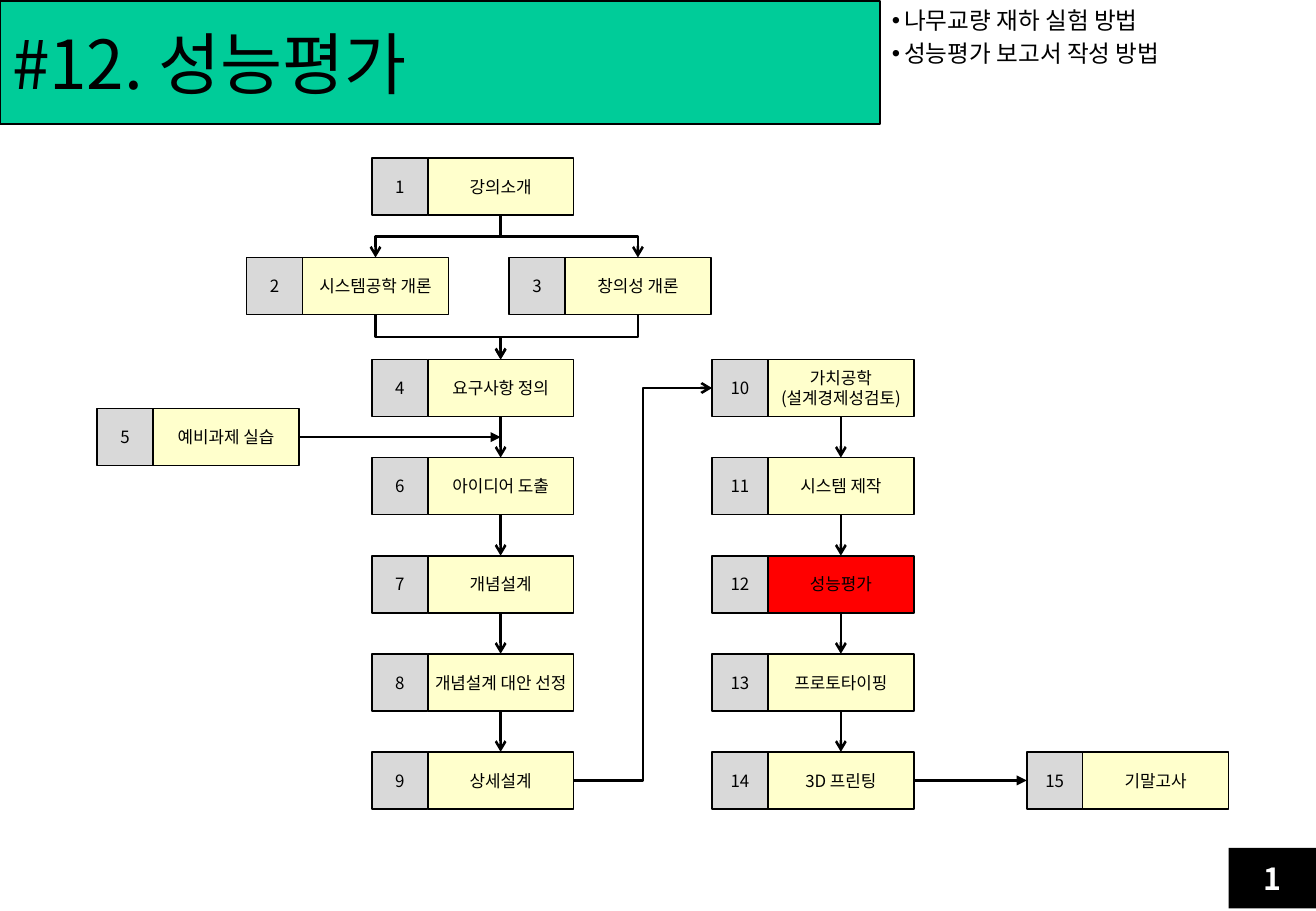
from typing import NamedTuple

from lxml import etree
from pptx import Presentation
from pptx.dml.color import RGBColor
from pptx.enum.shapes import MSO_CONNECTOR, MSO_SHAPE
from pptx.enum.text import MSO_ANCHOR, MSO_AUTO_SIZE, PP_ALIGN
from pptx.oxml.ns import qn
from pptx.util import Inches, Pt

STRAIGHT, ELBOW = MSO_CONNECTOR.STRAIGHT, MSO_CONNECTOR.ELBOW
RECTANGLE, PROCESS = MSO_SHAPE.RECTANGLE, MSO_SHAPE.FLOWCHART_PROCESS
TOP, MIDDLE = MSO_ANCHOR.TOP, MSO_ANCHOR.MIDDLE
LEFT, CENTER = PP_ALIGN.LEFT, PP_ALIGN.CENTER

FONT = "Noto Sans CJK KR"
BLACK, WHITE, GREEN = "000000", "FFFFFF", "00CC99"
GRAY, CREAM, RED = "D9D9D9", "FFFFCC", "FF0000"

NUMBER_W, LABEL_W, STEP_H = 0.46, 1.2, 0.47
MAIN_X, SECOND_X = 3.06, 5.86
INTRO_Y, BASICS_Y, FLOW_Y, LAST_Y = 1.3, 2.12, 2.96, 6.19
ROW_PITCH = (LAST_Y - FLOW_Y) / 4
CURRENT_STEP = 12


class Point(NamedTuple):
    x: float
    y: float


class Step(NamedTuple):
    number: int
    lines: tuple[str, ...]
    left: float
    top: float

    @property
    def label_left(self) -> float:
        return self.left + NUMBER_W

    @property
    def entry(self) -> Point:
        return Point(self.label_left + LABEL_W / 2, self.top)

    @property
    def exit(self) -> Point:
        return Point(self.entry.x, self.top + STEP_H)

    @property
    def left_side(self) -> Point:
        return Point(self.left, self.top + STEP_H / 2)

    @property
    def right_side(self) -> Point:
        return Point(self.label_left + LABEL_W, self.top + STEP_H / 2)


def flow_row(row: float) -> float:
    return FLOW_Y + row * ROW_PITCH


STEPS = {step.number: step for step in (
    Step(1, ("강의소개",), MAIN_X, INTRO_Y),
    Step(2, ("시스템공학 개론",), 2.03, BASICS_Y),
    Step(3, ("창의성 개론",), 4.19, BASICS_Y),
    Step(4, ("요구사항 정의",), MAIN_X, flow_row(0)),
    Step(5, ("예비과제 실습",), 0.8, flow_row(0.5)),
    Step(6, ("아이디어 도출",), MAIN_X, flow_row(1)),
    Step(7, ("개념설계",), MAIN_X, flow_row(2)),
    Step(8, ("개념설계 대안 선정",), MAIN_X, flow_row(3)),
    Step(9, ("상세설계",), MAIN_X, flow_row(4)),
    Step(10, ("가치공학", "(설계경제성검토)"), SECOND_X, flow_row(0)),
    Step(11, ("시스템 제작",), SECOND_X, flow_row(1)),
    Step(12, ("성능평가",), SECOND_X, flow_row(2)),
    Step(13, ("프로토타이핑",), SECOND_X, flow_row(3)),
    Step(14, ("3D 프린팅",), SECOND_X, flow_row(4)),
    Step(15, ("기말고사",), 8.45, flow_row(4)),
)}
DOWNWARD = ((4, 6), (6, 7), (7, 8), (8, 9), (10, 11), (11, 12), (12, 13), (13, 14))
BRANCHES = ((1, 2), (1, 3), (2, 4), (3, 4))


def color(value: str) -> RGBColor:
    return RGBColor.from_string(value)


def place(shape, left: float, top: float, width: float, height: float) -> None:
    shape.left, shape.top = Inches(left), Inches(top)
    shape.width, shape.height = Inches(width), Inches(height)


def paint(shape, fill: str, outlined: bool = True) -> None:
    shape.fill.solid()
    shape.fill.fore_color.rgb = color(fill)
    if outlined:
        shape.line.color.rgb = color(BLACK)
        shape.line.width = Pt(1)
    else:
        shape.line.fill.background()


def write(shape, lines: tuple[str, ...], size: float, align=CENTER, anchor=MIDDLE,
          ink: str = BLACK, bold: bool = False, wrap: bool = True) -> None:
    frame = shape.text_frame
    frame.auto_size = MSO_AUTO_SIZE.NONE
    frame.word_wrap = wrap
    frame.vertical_anchor = anchor
    for index, line in enumerate(lines):
        paragraph = frame.add_paragraph() if index else frame.paragraphs[0]
        paragraph.alignment = align
        run = paragraph.add_run()
        run.text = line
        run.font.size, run.font.bold = Pt(size), bold
        run.font.color.rgb = color(ink)
        run.font.name = FONT
        etree.SubElement(run.font._element, qn("a:ea"), typeface=FONT)


def add_box(slide, preset, left: float, top: float, width: float, height: float,
            fill: str, outlined: bool = True):
    box = slide.shapes.add_shape(preset, Inches(left), Inches(top),
                                 Inches(width), Inches(height))
    box.shadow.inherit = False
    paint(box, fill, outlined)
    return box


def add_step(slide, step: Step) -> None:
    label_fill = RED if step.number == CURRENT_STEP else CREAM
    cells = (
        (step.label_left, LABEL_W, label_fill, step.lines, 0.04),
        (step.left, NUMBER_W, GRAY, (str(step.number),), 0),
    )
    for left, width, fill, lines, side_inset in cells:
        cell = add_box(slide, PROCESS, left, step.top, width, STEP_H, fill)
        frame = cell.text_frame
        frame.margin_left = frame.margin_right = Inches(side_inset)
        frame.margin_top = frame.margin_bottom = Inches(0.04)
        write(cell, lines, 10)


def add_arrow(slide, start: Point, end: Point, kind=STRAIGHT, head: str = "arrow"):
    arrow = slide.shapes.add_connector(kind, Inches(start.x), Inches(start.y),
                                       Inches(end.x), Inches(end.y))
    arrow.line.color.rgb = color(BLACK)
    arrow.line.width = Pt(1.5)
    etree.SubElement(arrow.line._get_or_add_ln(), qn("a:tailEnd"), type=head)
    etree.SubElement(arrow._element.spPr, qn("a:effectLst"))
    return arrow


def add_branch(slide, start: Point, end: Point) -> None:
    """Draw an elbow that leaves downward: a sideways elbow turned by a quarter."""
    side = 1 if end.x < start.x else -1
    middle = Point((start.x + end.x) / 2, (start.y + end.y) / 2)
    half_drop, half_span = (end.y - start.y) / 2, abs(end.x - start.x) / 2
    branch = add_arrow(slide,
                       Point(middle.x - side * half_drop, middle.y - half_span),
                       Point(middle.x + side * half_drop, middle.y + half_span), ELBOW)
    quarter_turn = 90 if side == 1 else 270
    branch._element.spPr.find(qn("a:xfrm")).set("rot", str(quarter_turn * 60000))


def add_heading(slide) -> None:
    title, topics = slide.shapes.title, slide.placeholders[1]
    place(title, 0, 0.01, 7.24, 1.01)
    paint(title, GREEN)
    write(title, ("#12. 성능평가",), 40, align=LEFT, wrap=False)

    place(topics, 7.24, 0, 3.59, 1.46)
    write(topics, ("나무교량 재하 실험 방법", "성능평가 보고서 작성 방법"), 14,
          align=LEFT, anchor=TOP)
    for topic in topics.text_frame.paragraphs:
        properties = topic._p.get_or_add_pPr()
        properties.set("marL", str(Inches(0.1)))
        properties.set("indent", str(Inches(-0.1)))
        etree.SubElement(properties, qn("a:buChar"), char="•")


def main() -> None:
    deck = Presentation()
    deck.slide_width, deck.slide_height = Inches(10.83), Inches(7.5)
    slide = deck.slides.add_slide(deck.slide_layouts[1])

    add_heading(slide)
    page_number = add_box(slide, RECTANGLE, 10.11, 6.98, 0.72, 0.5, BLACK, outlined=False)
    write(page_number, ("1",), 18, ink=WHITE, bold=True)

    for step in STEPS.values():
        add_step(slide, step)
    for source, target in DOWNWARD:
        add_arrow(slide, STEPS[source].exit, STEPS[target].entry)
    for source, target in BRANCHES:
        add_branch(slide, STEPS[source].exit, STEPS[target].entry)

    practice = STEPS[5].right_side
    add_arrow(slide, practice, Point(STEPS[4].exit.x, practice.y), head="triangle")
    add_arrow(slide, STEPS[9].right_side, STEPS[10].left_side, ELBOW)
    add_arrow(slide, STEPS[14].right_side, STEPS[15].left_side, head="triangle")
    deck.save("out.pptx")


if __name__ == "__main__":
    main()
